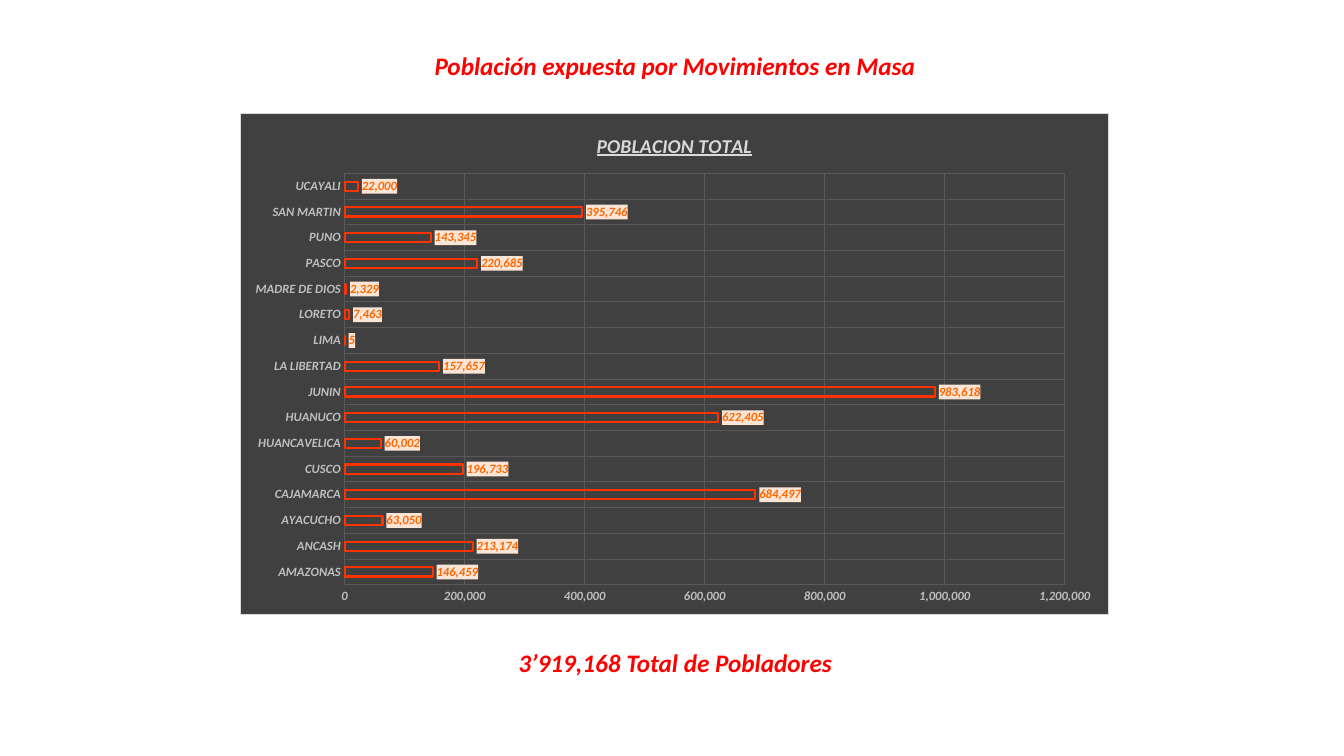
from dataclasses import dataclass

from lxml.etree import fromstring
from pptx import Presentation
from pptx.chart.axis import CategoryAxis as CatAxis, ValueAxis as ValAxis
from pptx.chart.chart import Chart
from pptx.chart.data import CategoryChartData as Data
from pptx.dml.color import RGBColor
from pptx.enum.chart import XL_CHART_TYPE as Kind, XL_LABEL_POSITION as Spot
from pptx.enum.chart import XL_TICK_MARK as Tick
from pptx.enum.text import MSO_AUTO_SIZE as Fit, PP_ALIGN as Align
from pptx.slide import Slide
from pptx.text.text import Font
from pptx.util import Cm, Pt

RED = RGBColor(0xFF, 0x00, 0x00)
EDGE = RGBColor(0xFF, 0x33, 0x00)
ORANGE = RGBColor(0xFF, 0x66, 0x00)
PEACH = RGBColor(0xFB, 0xE5, 0xD6)
DARK = RGBColor(0x40, 0x40, 0x40)
GRID = RGBColor(0x59, 0x59, 0x59)
SILVER = RGBColor(0xBF, 0xBF, 0xBF)
PALE = RGBColor(0xD9, 0xD9, 0xD9)
FACE = "Calibri"
COMMAS = "#,##0"
SPACES = (
    'xmlns:c="http://schemas.openxmlformats.org/drawingml/2006/chart" '
    'xmlns:a="http://schemas.openxmlformats.org/drawingml/2006/main"'
)


@dataclass
class Banner:
    text: str
    left: float
    top: float
    width: float
    wrap: bool


@dataclass
class Region:
    name: str
    people: int


BANNERS = [
    Banner("Población expuesta por Movimientos en Masa", 10.62, 1.14, 12.78, False),
    Banner("3’919,168 Total de Pobladores", 12.78, 16.18, 8.48, True),
]

REGIONS = [
    Region("AMAZONAS", 146459),
    Region("ANCASH", 213174),
    Region("AYACUCHO", 63050),
    Region("CAJAMARCA", 684497),
    Region("CUSCO", 196733),
    Region("HUANCAVELICA", 60002),
    Region("HUANUCO", 622405),
    Region("JUNIN", 983618),
    Region("LA LIBERTAD", 157657),
    Region("LIMA", 5),
    Region("LORETO", 7463),
    Region("MADRE DE DIOS", 2329),
    Region("PASCO", 220685),
    Region("PUNO", 143345),
    Region("SAN MARTIN", 395746),
    Region("UCAYALI", 22000),
]


def style(font: Font, size: float, color: RGBColor) -> None:
    font.name = FACE
    font.size = Pt(size)
    font.bold = True
    font.italic = True
    font.color.rgb = color


def add_banner(slide: Slide, banner: Banner) -> None:
    box = slide.shapes.add_textbox(
        Cm(banner.left), Cm(banner.top), Cm(banner.width), Cm(1.02)
    )
    frame = box.text_frame
    frame.word_wrap = banner.wrap
    frame.auto_size = Fit.SHAPE_TO_FIT_TEXT
    line = frame.paragraphs[0]
    line.alignment = Align.CENTER
    run = line.add_run()
    run.text = banner.text
    style(run.font, 18, RED)


def style_axis(axis: CatAxis | ValAxis) -> None:
    axis.major_tick_mark = Tick.NONE
    axis.minor_tick_mark = Tick.NONE
    axis.format.line.fill.background()
    axis.has_major_gridlines = True
    grid = axis.major_gridlines.format.line
    grid.color.rgb = GRID
    grid.width = Pt(0.75)
    style(axis.tick_labels.font, 9, SILVER)


def add_fill(chart: Chart, owner: str, color: RGBColor, edge: str) -> None:
    text = chart.element.xpath(f"{owner}/c:txPr")[0]
    text.addprevious(fromstring(
        f'<c:spPr {SPACES}><a:solidFill><a:srgbClr val="{color}"/></a:solidFill>'
        f"{edge}</c:spPr>"
    ))


def place_plot(chart: Chart, x: float, y: float, w: float, h: float) -> None:
    area = chart.element.xpath("c:chart/c:plotArea")[0]
    for old in area.xpath("c:layout"):
        area.remove(old)
    sizes = "".join(
        f'<c:{key} val="{size}"/>' for key, size in zip("xywh", (x, y, w, h))
    )
    area.insert(0, fromstring(
        f'<c:layout {SPACES}><c:manualLayout><c:layoutTarget val="inner"/>'
        f'<c:xMode val="edge"/><c:yMode val="edge"/>{sizes}'
        "</c:manualLayout></c:layout>"
    ))


def add_bars(slide: Slide) -> None:
    data = Data(number_format=COMMAS)
    data.categories = [region.name for region in REGIONS]
    data.add_series("Series 1", [region.people for region in REGIONS])
    chart = slide.shapes.add_chart(
        Kind.BAR_CLUSTERED, Cm(6.05), Cm(2.84), Cm(21.89), Cm(12.67), data
    ).chart
    chart.has_legend = False
    chart.font.name = FACE
    chart.font.size = Pt(10)

    chart.has_title = True
    chart.chart_title.include_in_layout = False
    run = chart.chart_title.text_frame.paragraphs[0].add_run()
    run.text = "POBLACION TOTAL"
    style(run.font, 14, PALE)
    run.font.underline = True

    style_axis(chart.category_axis)
    style_axis(chart.value_axis)
    scale = chart.value_axis
    scale.minimum_scale = 0
    scale.maximum_scale = 1200000
    scale.major_unit = 200000
    scale.tick_labels.number_format = COMMAS
    scale.tick_labels.number_format_is_linked = False

    plot = chart.plots[0]
    plot.vary_by_categories = False
    plot.gap_width = 182
    plot.overlap = -50
    bars = plot.series[0]
    bars.format.fill.background()
    bars.format.line.color.rgb = EDGE
    bars.format.line.width = Pt(1.5)

    labels = bars.data_labels
    labels.show_value = True
    labels.position = Spot.OUTSIDE_END
    labels.number_format = COMMAS
    labels.number_format_is_linked = False
    style(labels.font, 9, ORANGE)

    border = (
        f'<a:ln w="{Pt(0.75)}"><a:solidFill><a:srgbClr val="{PALE}"/>'
        "</a:solidFill></a:ln>"
    )
    add_fill(chart, ".", DARK, border)
    add_fill(chart, ".//c:ser/c:dLbls", PEACH, "")
    place_plot(chart, 0.12, 0.12, 0.83, 0.82)


def main() -> None:
    deck = Presentation()
    deck.slide_width = Cm(33.87)
    deck.slide_height = Cm(19.05)
    slide = deck.slides.add_slide(deck.slide_layouts[6])
    for banner in BANNERS:
        add_banner(slide, banner)
    add_bars(slide)
    deck.save("out.pptx")


if __name__ == "__main__":
    main()
